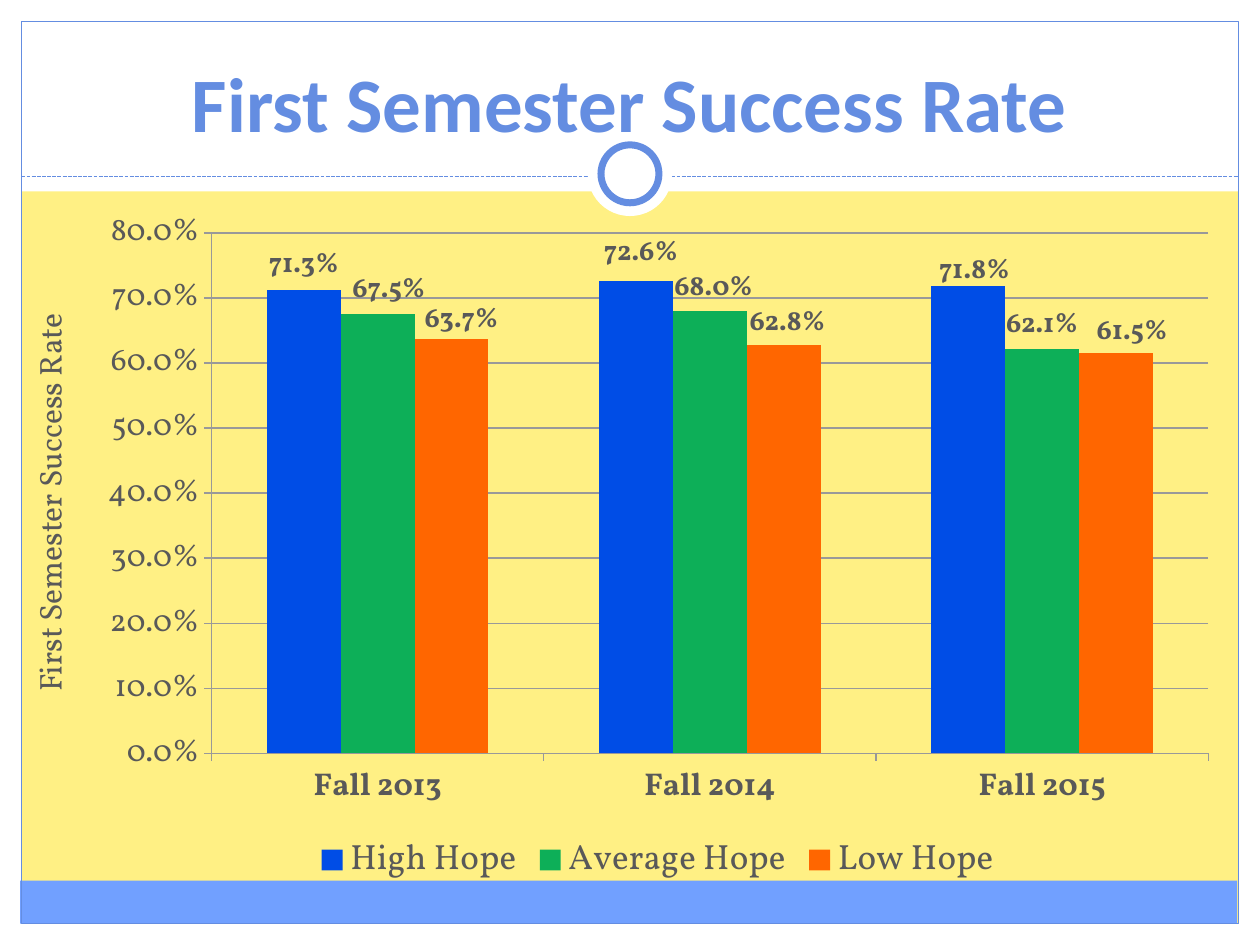
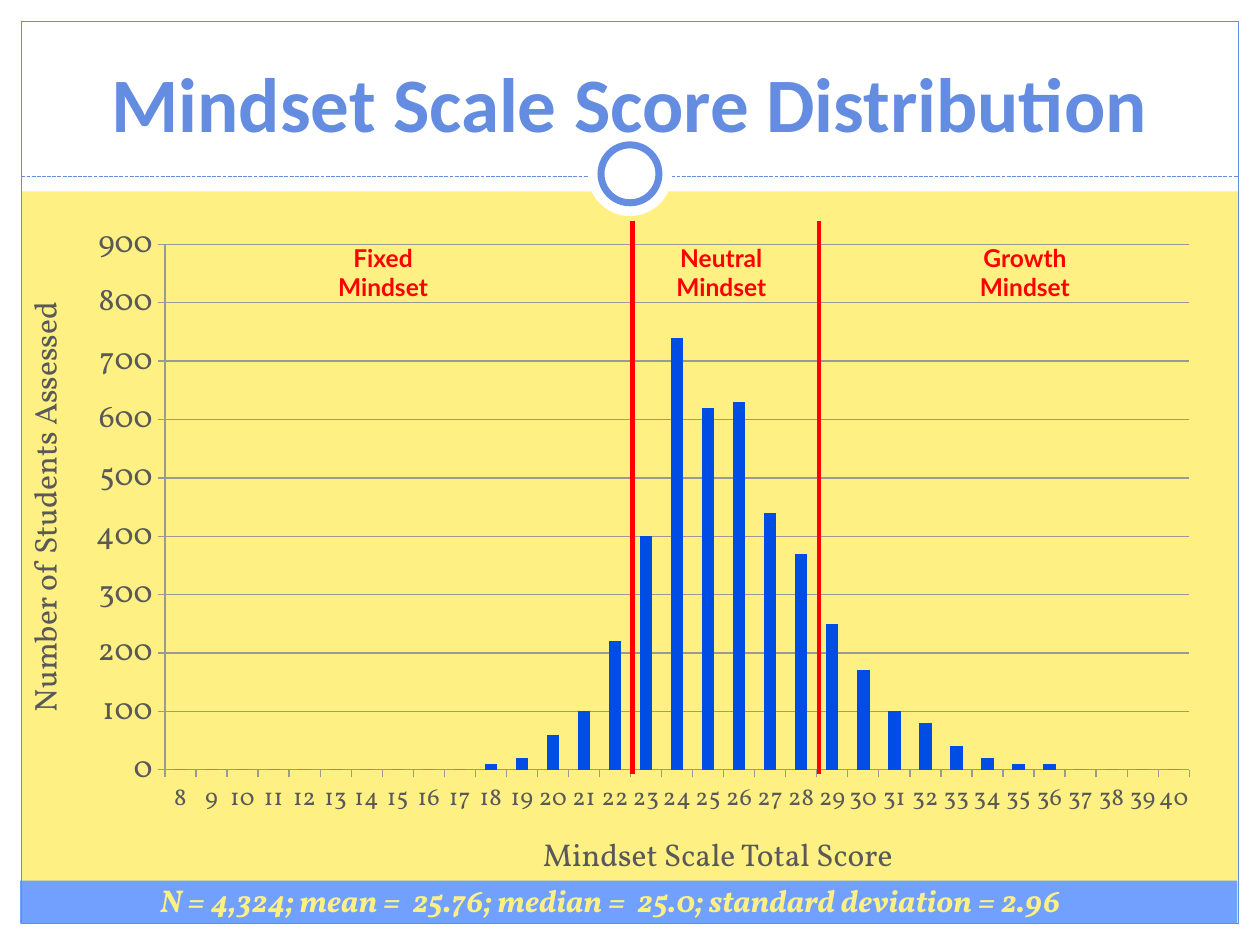
from lxml import etree
from pptx import Presentation
from pptx import util as u
from pptx.chart.data import CategoryChartData
from pptx.dml.color import RGBColor
from pptx.enum import chart as ch, dml, shapes, text
from pptx.oxml import ns

# Content
C = dict(paper="FFF084", white="FFFFFF", band="71A0FF", accent="648DE1",
         gray="595959", grid="999999", red="FF0000",
         high="004DE6", average="0DAF58", low="FF6600")
BODY, HEAD, TAG = "Vollkorn", "Calibri", "Lato"
W, H, EDGE = 10, 7.5, 0.17

SUCCESS = dict(
    box=(0.69, 1.67, 9.06, 5.41), plot=(0.99, 0.18, 7.91, 4.13),
    cats=["Fall 2013", "Fall 2014", "Fall 2015"],
    series=[("High Hope", [0.713, 0.726, 0.718], "high"),
            ("Average Hope", [0.675, 0.68, 0.621], "average"),
            ("Low Hope", [0.637, 0.628, 0.615], "low")],
    top=0.8, step=0.1, fmt="0.0%", cat_size=18, cat_bold=True)
# Label shifts in inches: (series, point) -> (right, down)
SHIFTS = {(0, 1): (0.04, -0.03), (0, 2): (0.05, 0.07),
          (1, 0): (0.09, 0), (1, 1): (0.03, 0.01),
          (2, 0): (0.08, 0.04), (2, 1): (0.03, 0.02), (2, 2): (0.13, 0.02)}

COUNTS = ([0] * 10 + [10, 20, 60, 100, 220, 400, 740, 620, 630, 440, 370, 250,
                      170, 100, 80, 40, 20, 10, 10] + [0] * 4)
SCORES = dict(
    box=(0.58, 1.67, 9.05, 4.91), plot=(0.73, 0.27, 8.13, 4.17),
    cats=[str(score) for score in range(8, 41)],
    series=[("Series 1", COUNTS, "high")],
    top=900, step=100, fmt="0", cat_size=14, cat_bold=False)
ZONES = [("Growth Mindset", 7.42, 1.43), ("Fixed Mindset", 2.5, 1.08),
         ("Neutral Mindset", 5.06, 1.33)]
CUTOFFS = [6.5, 5.02]


def rgb(name):
    return RGBColor.from_string(C[name])


def inches(*values):
    return [u.Inches(v) for v in values]


def set_font(font, size, color="gray", name=BODY, bold=False, italic=False):
    font.size, font.name = u.Pt(size), name
    font.bold, font.italic = bold, italic
    font.color.rgb = rgb(color)


def add_text(s, words, box, size=18, align="LEFT", anchor="TOP", vert=None, **fmt):
    tf = s.shapes.add_textbox(*inches(*box)).text_frame
    tf.word_wrap = True
    tf.vertical_anchor = text.MSO_ANCHOR[anchor]
    if vert:
        tf._txBody.bodyPr.set("vert", vert)
    p = tf.paragraphs[0]
    p.alignment = text.PP_ALIGN[align]
    r = p.add_run()
    r.text = words
    set_font(r.font, size, **fmt)


def add_block(s, box, fill=None, line=None, width=0.75, kind="RECTANGLE"):
    sp = s.shapes.add_shape(shapes.MSO_SHAPE[kind], *inches(*box))
    sp.shadow.inherit = False
    if fill:
        sp.fill.solid()
        sp.fill.fore_color.rgb = rgb(fill)
    else:
        sp.fill.background()
    if line:
        sp.line.color.rgb, sp.line.width = rgb(line), u.Pt(width)
    else:
        sp.line.fill.background()


def add_line(s, ends, color, width):
    line = s.shapes.add_connector(shapes.MSO_CONNECTOR.STRAIGHT, *inches(*ends))
    line.line.color.rgb, line.line.width = rgb(color), u.Pt(width)
    etree.SubElement(line._element.spPr, ns.qn("a:effectLst"))
    return line


def add_layout(parent, index, **values):
    """Insert a manual chart layout as child number index."""
    layout = etree.Element(ns.qn("c:layout"))
    manual = etree.SubElement(layout, ns.qn("c:manualLayout"))
    for tag, value in values.items():
        etree.SubElement(manual, ns.qn("c:" + tag)).set("val", str(value))
    parent.insert(index, layout)


def new_slide(prs, title):
    """Slide with the shared frame, ring, band and title."""
    s = prs.slides.add_slide(prs.slide_layouts[6])
    for box in [(0, H - EDGE, W, EDGE), (0, 0, W, 1.52),
                (0, 0, EDGE, H), (W - EDGE, 0, EDGE, H)]:
        add_block(s, box, "white")
    add_block(s, (0.16, 6.99, 9.66, 0.34), "band")
    add_block(s, (EDGE, EDGE, W - 2 * EDGE, H - 2 * EDGE), line="accent")
    rule = add_line(s, (EDGE, 1.4, W - EDGE, 1.4), "accent", 0.75)
    rule.line.dash_style = dml.MSO_LINE.SQUARE_DOT
    for size, line in [(0.67, None), (0.46, "accent")]:
        box = (W / 2 - size / 2, 1.38 - size / 2, size, size)
        add_block(s, box, "white", line, 4, "OVAL")
    add_text(s, title, (0.25, -0.03, 9.5, 1.25), 44, "CENTER", "BOTTOM",
             color="accent", name=HEAD, bold=True)
    return s


def add_columns(s, data):
    cd = CategoryChartData(number_format=data["fmt"])
    cd.categories = data["cats"]
    for name, values, _ in data["series"]:
        cd.add_series(name, values)
    chart = s.shapes.add_chart(ch.XL_CHART_TYPE.COLUMN_CLUSTERED,
                               *inches(*data["box"]), cd).chart
    set_font(chart.font, 18)
    chart.has_title = chart.has_legend = False
    plot = chart.plots[0]
    plot.gap_width, plot.overlap, plot.vary_by_categories = 150, 0, False
    for series, (_, _, color) in zip(plot.series, data["series"]):
        series.format.fill.solid()
        series.format.fill.fore_color.rgb = rgb(color)

    # Axes
    cat, val = chart.category_axis, chart.value_axis
    set_font(cat.tick_labels.font, data["cat_size"], bold=data["cat_bold"])
    val.minimum_scale, val.maximum_scale = 0, data["top"]
    val.major_unit = data["step"]
    val.tick_labels.number_format = data["fmt"]
    val.tick_labels.number_format_is_linked = False
    val.has_major_gridlines = True
    cat.has_major_gridlines = False
    for axis in (cat, val):
        axis.major_tick_mark = ch.XL_TICK_MARK.OUTSIDE
    for part in (cat, val, val.major_gridlines):
        part.format.line.color.rgb = rgb("grid")
        part.format.line.width = u.Pt(0.75)

    # Inner plot area, as shares of the chart
    x, y, w, h = data["plot"]
    cw, chh = data["box"][2:]
    area = chart._chartSpace.chart.plotArea
    for old in area.findall(ns.qn("c:layout")):
        area.remove(old)
    add_layout(area, 0, layoutTarget="inner", xMode="edge", yMode="edge",
               x=x / cw, y=y / chh, w=w / cw, h=h / chh)
    return chart


def add_value_labels(chart, data):
    cw, chh = data["box"][2:]
    for i, series in enumerate(chart.plots[0].series):
        labels = series.data_labels
        labels.show_value = True
        labels.number_format, labels.number_format_is_linked = data["fmt"], False
        labels.position = ch.XL_LABEL_POSITION.OUTSIDE_END
        set_font(labels.font, 16, bold=True)
        for j in range(len(data["cats"])):
            if (i, j) in SHIFTS:
                label = series.points[j].data_label
                set_font(label.font, 16, bold=True)
                label.position = ch.XL_LABEL_POSITION.OUTSIDE_END
        for item in series._element.iter(ns.qn("c:dLbl")):
            dx, dy = SHIFTS[i, int(item.find(ns.qn("c:idx")).get("val"))]
            add_layout(item, 1, x=dx / cw, y=dy / chh)


def success_slide(prs):
    s = new_slide(prs, "First Semester Success Rate")
    add_text(s, "First Semester Success Rate", (0.19, 2.2, 0.5, 3.58),
             align="CENTER", vert="vert270")
    chart = add_columns(s, SUCCESS)
    add_value_labels(chart, SUCCESS)
    chart.has_legend = True
    chart.legend.position = ch.XL_LEGEND_POSITION.BOTTOM
    chart.legend.include_in_layout = False
    set_font(chart.legend.font, 20)


def mindset_slide(prs):
    s = new_slide(prs, "Mindset Scale Score Distribution")
    add_columns(s, SCORES)
    # Axis titles and statistics
    add_text(s, "Number of Students Assessed", (0.15, 2.17, 0.5, 3.58), vert="vert270")
    add_text(s, "Mindset Scale Total Score", (4.21, 6.58, 3.13, 0.4))
    add_text(s, "N = 4,324; mean =  25.76; median =  25.0; standard deviation = 2.96",
             (1.17, 6.94, 7.83, 0.4), color="paper", bold=True, italic=True)
    # Mindset zones
    for words, left, width in ZONES:
        add_text(s, words, (left, 1.88, width, 0.57), 14, "CENTER",
                 color="red", name=TAG, bold=True)
    for x in CUTOFFS:
        add_line(s, (x, 1.75, x, 6.14), "red", 2.5)


def main():
    prs = Presentation()
    prs.slide_width, prs.slide_height = inches(W, H)
    fill = prs.slide_master.background.fill
    fill.solid()
    fill.fore_color.rgb = rgb("paper")
    success_slide(prs)
    mindset_slide(prs)
    prs.save("out.pptx")


if __name__ == "__main__":
    main()
